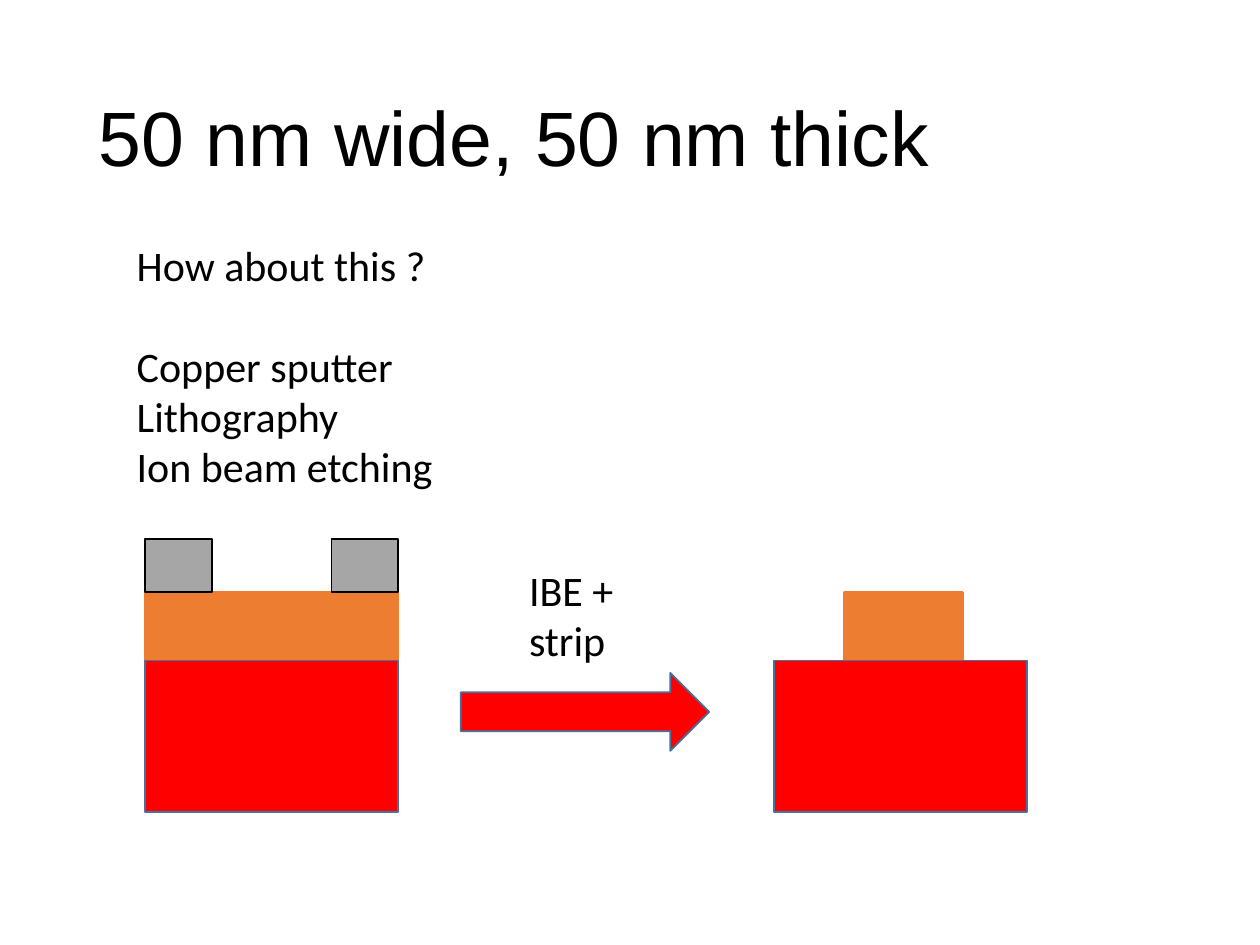
from pptx import Presentation
from pptx import util as u
from pptx.dml.color import RGBColor
from pptx.enum import shapes, text

BLACK = RGBColor(0, 0, 0)
RED = RGBColor(0xFF, 0, 0)
BLUE = RGBColor(0x43, 0x73, 0x9E)
COPPER = RGBColor(0xED, 0x7D, 0x31)
GRAY = RGBColor(0xA6, 0xA6, 0xA6)

RECT = shapes.MSO_SHAPE.RECTANGLE
ARROW = shapes.MSO_SHAPE.RIGHT_ARROW


class Sketch:
    def __init__(self, page, font="Calibri", size=24):
        self.page = page
        self.font = font
        self.size = size

    def label(self, lines, left, top, width, height, font=None, size=None,
              anchor=text.MSO_ANCHOR.TOP, spacing=None):
        """Add a text box with one paragraph per line and return its paragraphs."""
        box = self.page.shapes.add_textbox(*map(u.Pt, (left, top, width, height)))
        frame = box.text_frame
        frame.word_wrap = True
        frame.vertical_anchor = anchor
        frame.text = "\n".join(lines)
        for para in frame.paragraphs:
            para.font.name = font or self.font
            para.font.size = u.Pt(size or self.size)
            para.font.color.rgb = BLACK
            if spacing:
                para.line_spacing = spacing
        return frame.paragraphs

    def block(self, left, top, width, height, fill, line, weight=1, kind=RECT):
        shape = self.page.shapes.add_shape(
            kind, *map(u.Pt, (left, top, width, height)))
        shape.shadow.inherit = False
        shape.fill.solid()
        shape.fill.fore_color.rgb = fill
        shape.line.color.rgb = line
        shape.line.width = u.Pt(weight)

    def copper(self, left, width):
        self.block(left, FILM_TOP, width, FILM_HEIGHT, COPPER, COPPER, 1.5)

    def substrate(self, left):
        self.block(left, FILM_TOP + FILM_HEIGHT, WAFER_WIDTH, 86.5, RED, BLUE)


FILM_TOP, FILM_HEIGHT = 338.5, 39
WAFER_WIDTH = 144.5
BEFORE_LEFT, AFTER_LEFT = 83, 442.5
MASK_WIDTH, MASK_HEIGHT = 38, 30.5


def main():
    deck = Presentation()
    deck.slide_width, deck.slide_height = u.Pt(720), u.Pt(540)
    sketch = Sketch(deck.slides.add_slide(deck.slide_layouts[6]))

    sketch.label(["50 nm wide, 50 nm thick"], 49.5, 28.75, 621, 104.4,
                 "Arial", 44, text.MSO_ANCHOR.MIDDLE, 0.9)
    steps = sketch.label(["How about this ?", "Copper sputter", "Lithography",
                          "Ion beam etching"], 71, 133.2, 578, 152.6)
    steps[1].space_before = u.Pt(28.8)

    sketch.copper(BEFORE_LEFT, WAFER_WIDTH)
    sketch.substrate(BEFORE_LEFT)
    for left in (BEFORE_LEFT, BEFORE_LEFT + WAFER_WIDTH - MASK_WIDTH):
        sketch.block(left, FILM_TOP - MASK_HEIGHT, MASK_WIDTH, MASK_HEIGHT,
                     GRAY, BLACK)

    sketch.block(263.3, 384.5, 142, 44.6, RED, BLUE, kind=ARROW)
    sketch.label(["IBE + strip"], 295.2, 319, 98, 65.5)

    sketch.copper(482.4, 67.7)
    sketch.substrate(AFTER_LEFT)

    deck.save("out.pptx")


if __name__ == "__main__":
    main()
